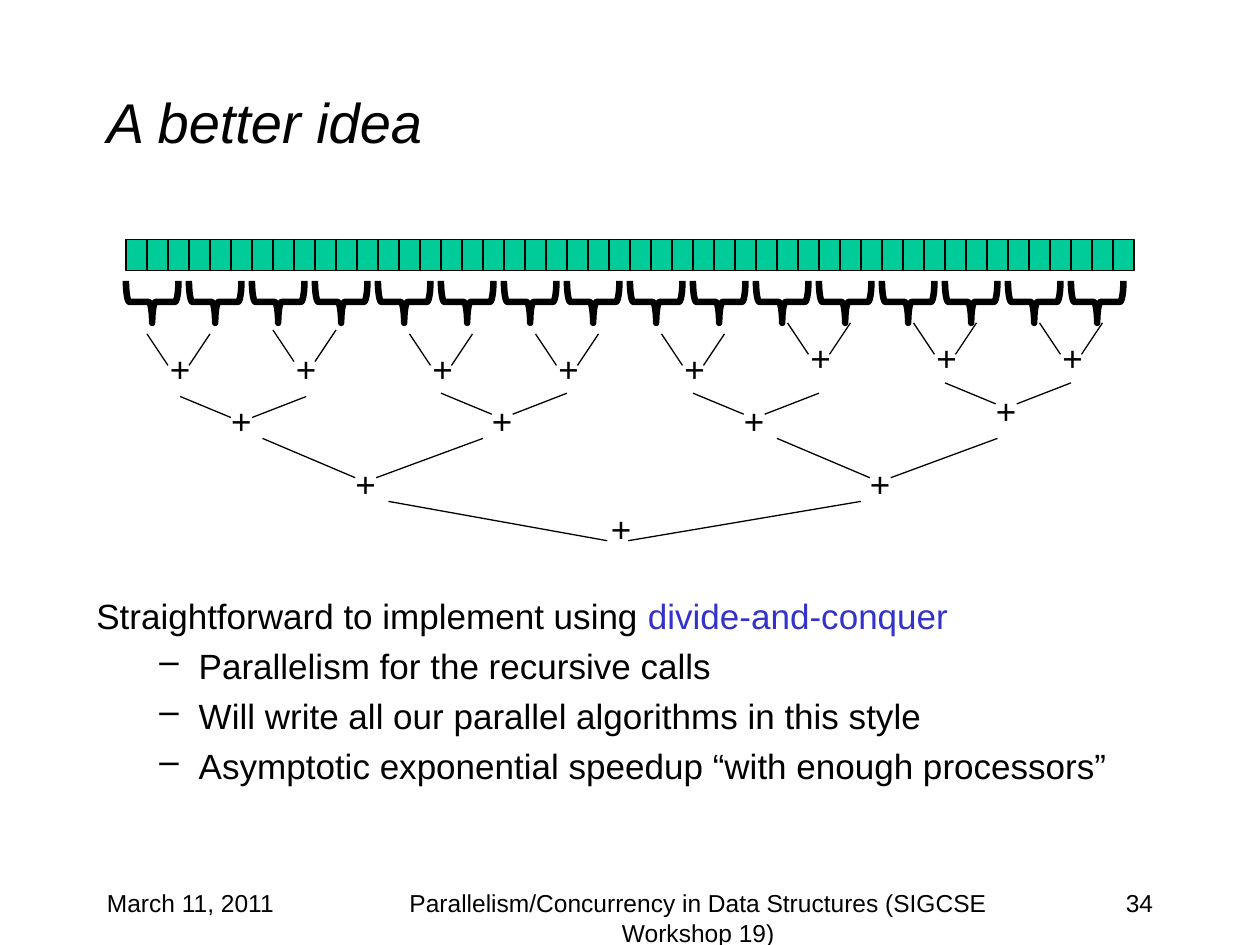
from lxml import etree
from pptx import Presentation, util as u
from pptx.dml.color import RGBColor
from pptx.enum import shapes, text
from pptx.oxml.ns import qn

Pt = u.Pt
COLORS = {"ink": "000000", "cell": "00CC99", "accent": "3333CC"}
LEFT, CENTER, RIGHT = text.PP_ALIGN.LEFT, text.PP_ALIGN.CENTER, text.PP_ALIGN.RIGHT

presentation = Presentation()
presentation.slide_width, presentation.slide_height = Pt(720), Pt(540)
slide = presentation.slides.add_slide(presentation.slide_layouts[6])


def add_text(box, paragraphs, size, align=LEFT, italic=False, **frame_format):
    """Add a text box; each paragraph is a list of (text, color name) runs."""
    frame = slide.shapes.add_textbox(*map(Pt, box)).text_frame
    for name, value in {"word_wrap": True, **frame_format}.items():
        setattr(frame, name, value)
    for index, runs in enumerate(paragraphs):
        paragraph = frame.paragraphs[0] if index == 0 else frame.add_paragraph()
        paragraph.alignment = align
        for content, color in runs:
            run = paragraph.add_run()
            run.text = content
            font_format = {"name": "Arial", "size": Pt(size), "italic": italic}
            for name, value in font_format.items():
                setattr(run.font, name, value)
            run.font.color.rgb = RGBColor.from_string(COLORS[color])
    return frame


def add_branch(start, end):
    line = slide.shapes.add_connector(
        shapes.MSO_CONNECTOR.STRAIGHT, *map(Pt, start + end))
    line.line.width = Pt(0.75)
    line.line.color.rgb = RGBColor.from_string(COLORS["ink"])
    etree.SubElement(line._element.spPr, qn("a:effectLst"))


# Title and body
add_text((54, 24, 612, 90), [[("A better idea", "ink")]], 32, italic=True,
         vertical_anchor=text.MSO_ANCHOR.MIDDLE)

body = add_text((48, 336, 612, 150), [
    [("Straightforward to implement using ", "ink"), ("divide-and-conquer", "accent")],
    [("Parallelism for the recursive calls", "ink")],
    [("Will write all our parallel algorithms in this style", "ink")],
    [("Asymptotic exponential speedup “with enough processors”", "ink")],
], 20)
for index, paragraph in enumerate(body.paragraphs):
    paragraph.space_before = Pt(4.6)
    margin, indent = (58.5, -22.5) if index else (27, -27)
    properties = paragraph._p.get_or_add_pPr()
    properties.set("marL", str(Pt(margin)))
    properties.set("indent", str(Pt(indent)))
    if index:
        paragraph.level = 1
        etree.SubElement(properties, qn("a:buChar")).set("char", "–")

# Footer
for left, width, content, align in [
    (54, 150, "March 11, 2011", LEFT),
    (198, 402, "Parallelism/Concurrency in Data Structures (SIGCSE Workshop 19)", CENTER),
    (516, 150, "34", RIGHT),
]:
    add_text((left, 504, width, 36), [[(content, "ink")]], 14, align)

# Array cells, then one brace under every three cells
RECTANGLE, BRACE = shapes.MSO_SHAPE.RECTANGLE, shapes.MSO_SHAPE.LEFT_BRACE
array_parts = [(RECTANGLE, (72 + 12 * i, 136.8, 12, 18), 0, 0.75) for i in range(48)]
array_parts += [(BRACE, (75 + 36 * i, 157.5, 24, 30), 270, 3.75) for i in range(16)]
for kind, box, rotation, line_width in array_parts:
    shape = slide.shapes.add_shape(kind, *map(Pt, box))
    shape.rotation = rotation
    shape.shadow.inherit = False
    shape.line.width = Pt(line_width)
    shape.line.color.rgb = RGBColor.from_string(COLORS["ink"])
    if kind == RECTANGLE:
        shape.fill.solid()
        shape.fill.fore_color.rgb = RGBColor.from_string(COLORS["cell"])
    else:
        shape.fill.background()

# Reduction tree: two branches of one level run to tips 12 pt apart around a plus.
# Level: span, tip offset, drop, plus offset, nodes as (left, top, plus top)
TIP_GAP = 12
levels = [
    (36, 12, 18, 6, [
        (84, 190.8, 195), (156, 188.6, 195), (234, 190.8, 195), (306, 190.8, 195),
        (378, 190.8, 195), (450, 184.5, 188.6), (522, 184.5, 188.6), (594, 184.5, 188.6)]),
    (72, 29, 12, 22, [
        (103, 226.6, 224.7), (252, 224.7, 224.7), (396, 224.7, 224.7), (540, 218.8, 218.8)]),
    (126, 53, 22.5, 46, [(150, 250.5, 260.6), (444, 250.5, 260.6)]),
    (270, 125, 22.5, 120, [(222, 286.5, 286.5)]),
]
for span, tip, drop, plus_offset, nodes in levels:
    for left, top, plus_top in nodes:
        add_branch((left, top), (left + tip, top + drop))
        add_branch((left + span, top), (left + tip + TIP_GAP, top + drop))
        add_text((left + plus_offset, plus_top, 26, 31.5), [[("+", "ink")]], 20,
                 word_wrap=False, auto_size=text.MSO_AUTO_SIZE.SHAPE_TO_FIT_TEXT)

presentation.save("out.pptx")
